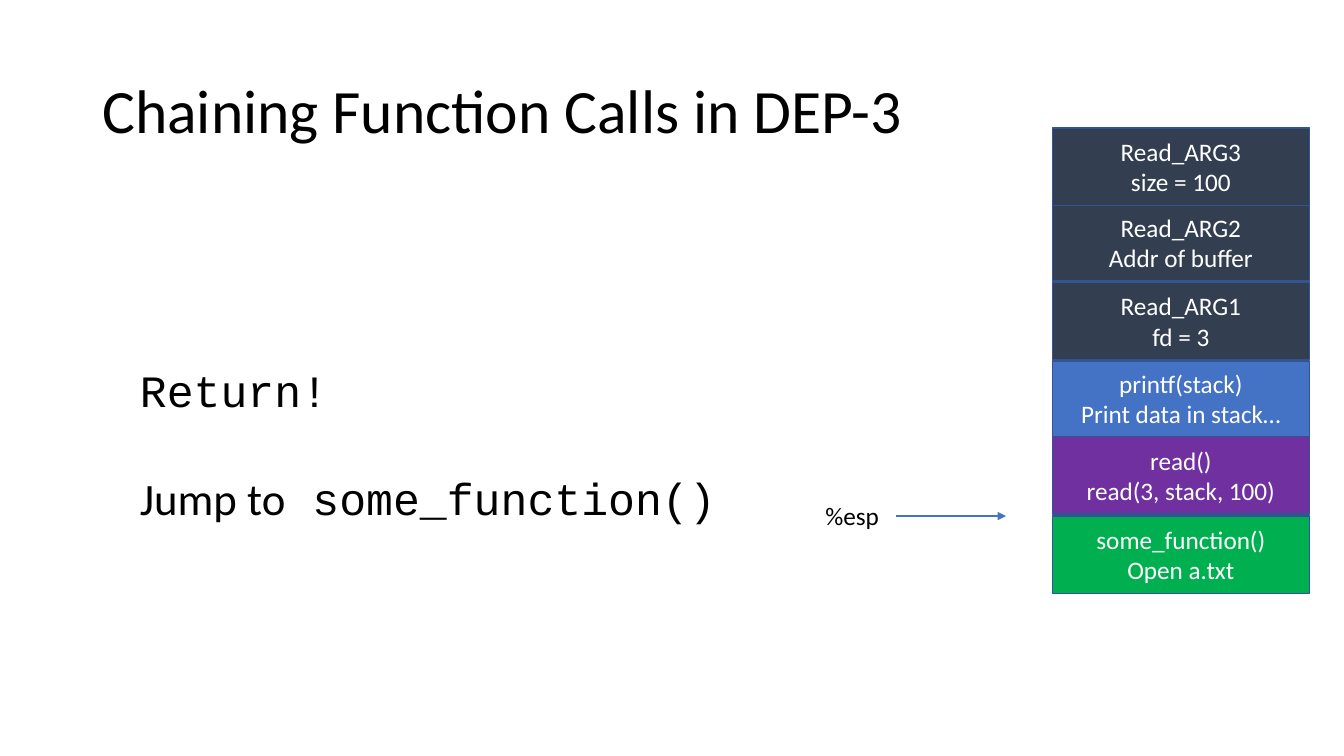
from lxml import etree
from pptx import Presentation
from pptx.dml.color import RGBColor
from pptx.enum import shapes, text
from pptx.oxml.ns import qn
from pptx.util import Pt

BLACK = RGBColor(0x00, 0x00, 0x00)
WHITE = RGBColor(0xFF, 0xFF, 0xFF)
SLATE = RGBColor(0x33, 0x3F, 0x50)
BLUE = RGBColor(0x44, 0x72, 0xC4)
PURPLE = RGBColor(0x70, 0x30, 0xA0)
GREEN = RGBColor(0x00, 0xB0, 0x50)
BORDER = RGBColor(0x32, 0x54, 0x91)


def style(run, size, color=BLACK, font="Calibri"):
    run.font.size = Pt(size)
    run.font.name = font
    run.font.color.rgb = color


def add_label(left, top, width, height, wrap=True):
    """Add an empty text box and return its text frame."""
    box = slide.shapes.add_textbox(Pt(left), Pt(top), Pt(width), Pt(height))
    box.text_frame.word_wrap = wrap
    return box.text_frame


deck = Presentation()
deck.slide_width, deck.slide_height = Pt(960), Pt(540)
slide = deck.slides.add_slide(deck.slide_layouts[6])

title = add_label(66, 28.8, 828, 104.4)
title.vertical_anchor = text.MSO_ANCHOR.MIDDLE
title.text = "Chaining Function Calls in DEP-3"
title.paragraphs[0].line_spacing = 0.9
style(title.paragraphs[0].runs[0], 44)

# Stack frames, from the lowest one upwards
stack = [
    (368.6, 55.4, GREEN, "some_function()\nOpen a.txt"),
    (311.8, 55.4, PURPLE, "read()\nread(3, stack, 100)"),
    (257.8, 54, BLUE, "printf(stack)\nPrint data in stack…"),
    (201.6, 55.4, SLATE, "Read_ARG1\nfd = 3"),
    (145.4, 55.4, SLATE, "Read_ARG2\nAddr of buffer"),
    (91.4, 55.4, SLATE, "Read_ARG3\nsize = 100"),
]
for top, height, color, words in stack:
    frame = slide.shapes.add_shape(
        shapes.MSO_SHAPE.RECTANGLE, Pt(751.7), Pt(top), Pt(183.6), Pt(height))
    frame.shadow.inherit = False
    frame.fill.solid()
    frame.fill.fore_color.rgb = color
    frame.line.color.rgb = BORDER
    frame.line.width = Pt(1)
    frame.text_frame.vertical_anchor = text.MSO_ANCHOR.MIDDLE
    frame.text_frame.text = words
    for line in frame.text_frame.paragraphs:
        line.alignment = text.PP_ALIGN.CENTER
        style(line.runs[0], 18, WHITE)

# Stack pointer
esp = add_label(582.5, 353.5, 53.3, 28.8, wrap=False)
esp.text = "%esp"
style(esp.paragraphs[0].runs[0], 18)

pointer = slide.shapes.add_connector(
    shapes.MSO_CONNECTOR.STRAIGHT, Pt(640), Pt(368.6), Pt(718.6), Pt(368.6))
pointer.line.color.rgb = BLUE
pointer.line.width = Pt(1.5)
etree.SubElement(pointer.line._get_or_add_ln(), qn("a:tailEnd"), type="triangle")
etree.SubElement(pointer._element.spPr, qn("a:effectLst"))

steps = add_label(92.9, 255.6, 470.9, 123.8)
steps.text = "Return!\nJump to"
ret, jump = steps.paragraphs
jump.space_before = Pt(39)
style(ret.runs[0], 32, font="Courier New")
style(jump.runs[0], 32)
target = jump.add_run()
target.text = " some_function()"
style(target, 32, font="Courier New")

deck.save("out.pptx")
